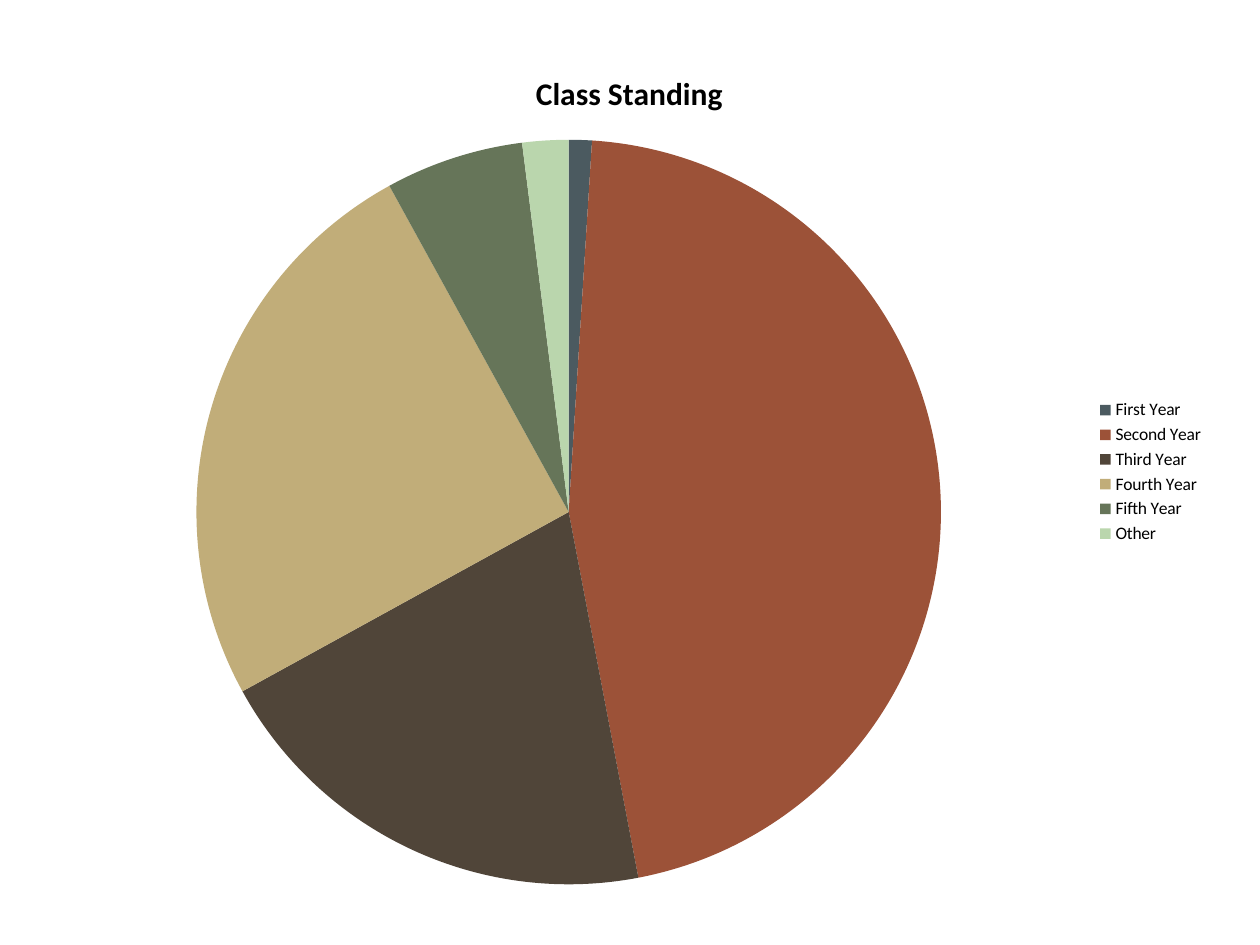
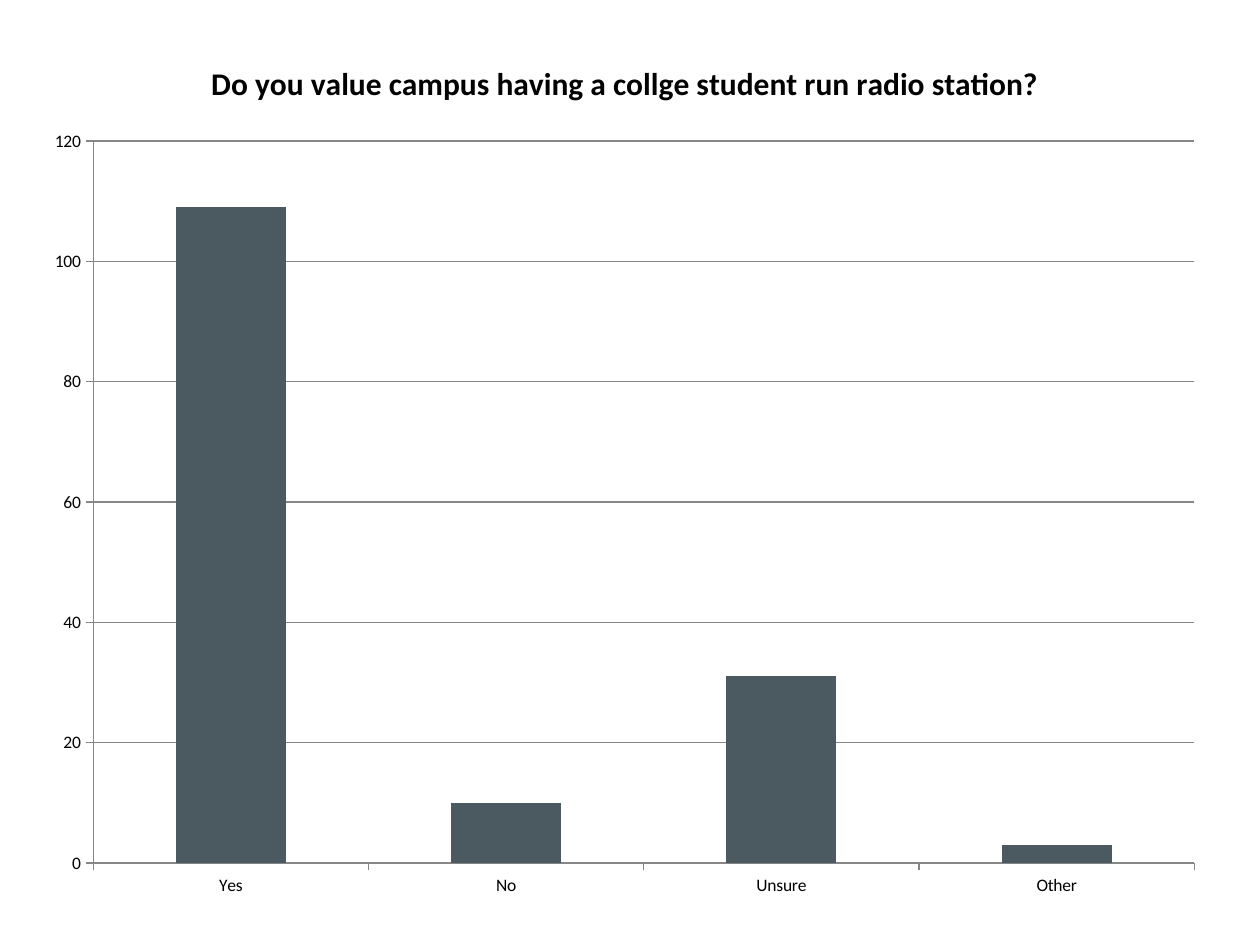
from dataclasses import dataclass

from lxml.etree import SubElement
from pptx import Presentation
from pptx.chart.chart import Chart
from pptx.chart.data import CategoryChartData
from pptx.dml.color import RGBColor
from pptx.enum.chart import XL_CHART_TYPE as ChartType
from pptx.enum.chart import XL_LEGEND_POSITION as LegendPosition
from pptx.enum.chart import XL_TICK_MARK as TickMark
from pptx.oxml.ns import qn
from pptx.presentation import Presentation as Deck
from pptx.util import Inches, Pt

FONT = "Calibri"
BLACK = RGBColor(0x00, 0x00, 0x00)
GRID_GRAY = RGBColor(0x86, 0x86, 0x86)
SLATE = RGBColor(0x4B, 0x5A, 0x60)
RUST = RGBColor(0x9C, 0x52, 0x38)
BROWN = RGBColor(0x50, 0x45, 0x39)
SAND = RGBColor(0xC1, 0xAD, 0x79)
MOSS = RGBColor(0x66, 0x75, 0x59)
MINT = RGBColor(0xBA, 0xD6, 0xAD)
YEAR_COLORS = (SLATE, RUST, BROWN, SAND, MOSS, MINT)


@dataclass(frozen=True)
class Box:
    left: float
    top: float
    width: float
    height: float


@dataclass(frozen=True)
class Question:
    title: str
    answers: dict[str, int]
    kind: ChartType
    frame: Box
    plot: Box


CLASS_STANDING = Question(
    "Class Standing",
    {"First Year": 1, "Second Year": 46, "Third Year": 20,
     "Fourth Year": 25, "Fifth Year": 6, "Other": 2},
    ChartType.PIE,
    Box(0.33, 0.33, 9.33, 6.83),
    Box(1.56, 1.11, 5.91, 5.91),
)
RADIO_VALUE = Question(
    "Do you value campus having a collge student run radio station?",
    {"Yes": 109, "No": 10, "Unsure": 31, "Other": 3},
    ChartType.COLUMN_CLUSTERED,
    Box(0.25, 0.25, 9.42, 7),
    Box(0.74, 1.12, 8.74, 5.73),
)


def place_plot(chart: Chart, frame: Box, plot: Box) -> None:
    plot_area = chart.element.find(f".//{qn('c:plotArea')}")
    layout = plot_area.find(qn("c:layout"))
    if layout is None:
        layout = SubElement(plot_area, qn("c:layout"))
        plot_area.insert(0, layout)
    manual = SubElement(layout, qn("c:manualLayout"))
    settings = {
        "layoutTarget": "inner",
        "xMode": "edge",
        "yMode": "edge",
        "x": round((plot.left - frame.left) / frame.width, 4),
        "y": round((plot.top - frame.top) / frame.height, 4),
        "w": round(plot.width / frame.width, 4),
        "h": round(plot.height / frame.height, 4),
    }
    for tag, value in settings.items():
        SubElement(manual, qn(f"c:{tag}")).set("val", str(value))


def add_question(deck: Deck, question: Question) -> Chart:
    slide = deck.slides.add_slide(deck.slide_layouts[6])
    data = CategoryChartData()
    data.categories = question.answers.keys()
    data.add_series(question.title, question.answers.values())
    frame = question.frame
    chart = slide.shapes.add_chart(
        question.kind, Inches(frame.left), Inches(frame.top),
        Inches(frame.width), Inches(frame.height), data,
    ).chart
    chart.font.name = FONT
    chart.font.size = Pt(10)
    chart.font.color.rgb = BLACK
    chart.has_legend = False
    chart.has_title = True
    title = chart.chart_title.text_frame.paragraphs[0].add_run()
    title.text = question.title
    title.font.name = FONT
    title.font.size = Pt(18)
    title.font.bold = True
    title.font.color.rgb = BLACK
    chart.chart_title.include_in_layout = False
    place_plot(chart, frame, question.plot)
    return chart


def style_pie(chart: Chart) -> None:
    plot = chart.plots[0]
    plot.vary_by_categories = True
    for index, color in enumerate(YEAR_COLORS):
        slice_format = plot.series[0].points[index].format
        slice_format.fill.solid()
        slice_format.fill.fore_color.rgb = color
        slice_format.line.fill.background()
    chart.has_legend = True
    chart.legend.position = LegendPosition.RIGHT
    chart.legend.include_in_layout = False


def style_columns(chart: Chart) -> None:
    plot = chart.plots[0]
    plot.vary_by_categories = False
    plot.gap_width = 150
    bars = plot.series[0]
    bars.format.fill.solid()
    bars.format.fill.fore_color.rgb = SLATE
    for axis in (chart.category_axis, chart.value_axis):
        axis.major_tick_mark = TickMark.OUTSIDE
        axis.minor_tick_mark = TickMark.NONE
        axis.format.line.color.rgb = GRID_GRAY
        axis.format.line.width = Pt(0.75)
    scale = chart.value_axis
    scale.minimum_scale = 0
    scale.maximum_scale = 120
    scale.major_unit = 20
    scale.has_major_gridlines = True
    scale.major_gridlines.format.line.color.rgb = GRID_GRAY
    scale.major_gridlines.format.line.width = Pt(0.75)


def main() -> None:
    deck = Presentation()
    deck.slide_width = Inches(10)
    deck.slide_height = Inches(7.5)
    style_pie(add_question(deck, CLASS_STANDING))
    style_columns(add_question(deck, RADIO_VALUE))
    deck.save("out.pptx")


if __name__ == "__main__":
    main()
